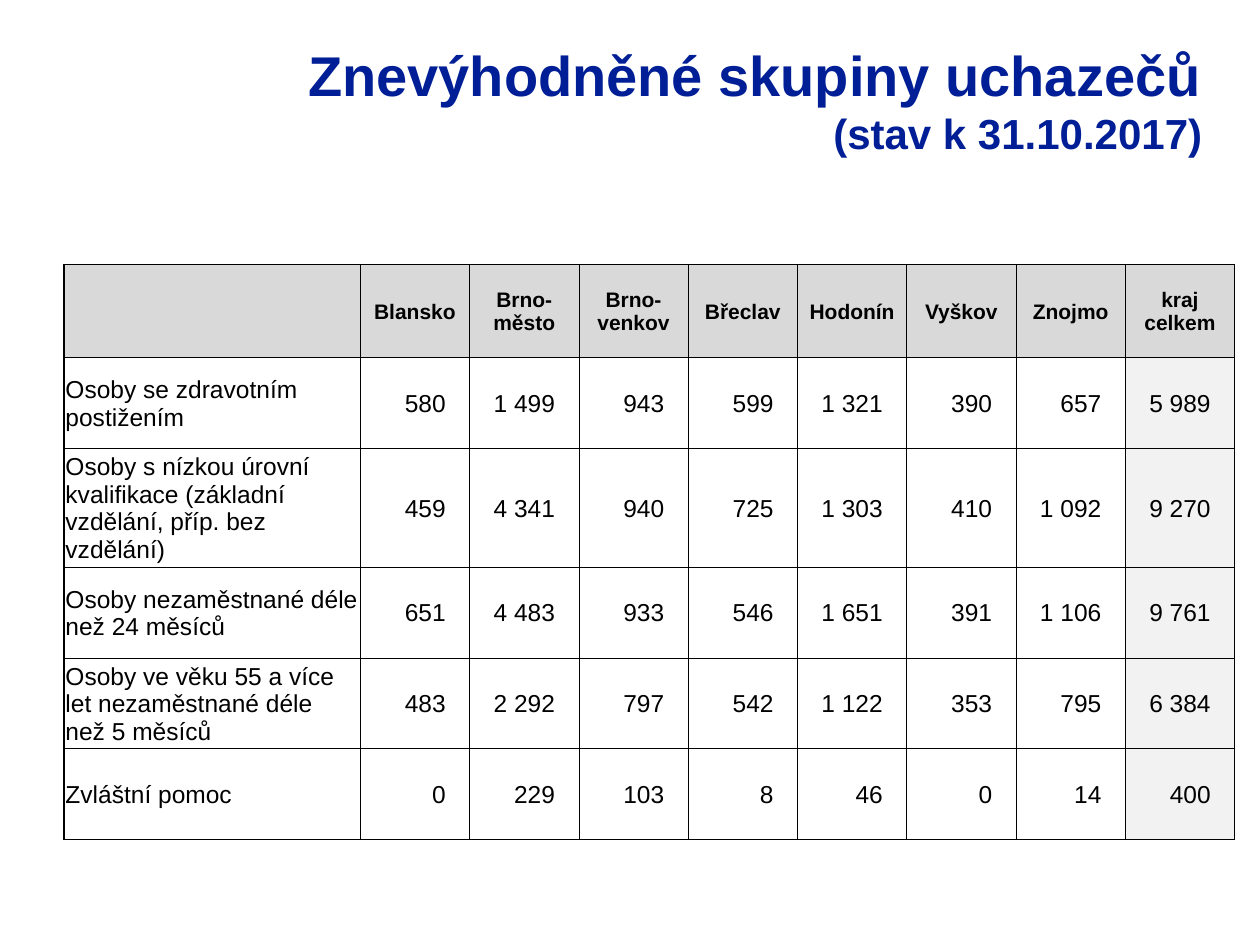
from lxml import etree
from pptx import Presentation
from pptx.dml.color import RGBColor
from pptx.enum.text import MSO_ANCHOR, PP_ALIGN
from pptx.oxml.ns import qn
from pptx.util import Inches, Pt

LEFT, CENTER, RIGHT = PP_ALIGN.LEFT, PP_ALIGN.CENTER, PP_ALIGN.RIGHT
TOP, MIDDLE = MSO_ANCHOR.TOP, MSO_ANCHOR.MIDDLE
NAVY = RGBColor(0x00, 0x1E, 0x96)
BLACK = RGBColor(0x00, 0x00, 0x00)
HEADER_GREY = RGBColor(0xD9, 0xD9, 0xD9)
TOTAL_GREY = RGBColor(0xF2, 0xF2, 0xF2)


def write(paragraph, text, size=14, color=BLACK, bold=False, align=LEFT):
    paragraph.alignment = align
    run = paragraph.add_run()
    run.text = text
    run.font.name = "Arial"
    run.font.size = Pt(size)
    run.font.bold = bold
    run.font.color.rgb = color


def set_borders(cell, **widths):
    properties = cell._tc.get_or_add_tcPr()
    for position, (side, width) in enumerate(widths.items()):
        line = etree.Element(qn(f"a:ln{side}"), w=str(Pt(width)))
        fill = etree.SubElement(line, qn("a:solidFill"))
        etree.SubElement(fill, qn("a:srgbClr"), val=str(BLACK))
        properties.insert(position, line)


prs = Presentation()
prs.slide_width, prs.slide_height = Inches(10), Inches(7.5)
slide = prs.slides.add_slide(prs.slide_layouts[6])

heading = slide.shapes.add_textbox(Inches(1.77), Inches(0.21), Inches(7.87), Inches(1.5)).text_frame
heading.word_wrap = True
heading.vertical_anchor = TOP
heading.margin_top = Inches(0.11)
write(heading.paragraphs[0], "Znevýhodněné skupiny uchazečů", size=32, color=NAVY, bold=True, align=RIGHT)
write(heading.add_paragraph(), "(stav k 31.10.2017)", size=24, color=NAVY, bold=True, align=RIGHT)

rows = [
    ["", "Blansko", "Brno-město", "Brno-venkov", "Břeclav", "Hodonín", "Vyškov", "Znojmo", "kraj celkem"],
    ["Osoby se zdravotním postižením",
     "580", "1 499", "943", "599", "1 321", "390", "657", "5 989"],
    ["Osoby s nízkou úrovní kvalifikace (základní vzdělání, příp. bez vzdělání)",
     "459", "4 341", "940", "725", "1 303", "410", "1 092", "9 270"],
    ["Osoby nezaměstnané déle než 24 měsíců",
     "651", "4 483", "933", "546", "1 651", "391", "1 106", "9 761"],
    ["Osoby ve věku 55 a více let nezaměstnané déle než 5 měsíců",
     "483", "2 292", "797", "542", "1 122", "353", "795", "6 384"],
    ["Zvláštní pomoc",
     "0", "229", "103", "8", "46", "0", "14", "400"],
]
row_heights = [0.74, 0.72, 0.88, 0.72, 0.72, 0.72]
last_row, last_col = len(rows) - 1, len(rows[0]) - 1

groups = slide.shapes.add_table(
    len(rows), len(rows[0]), Inches(0.51), Inches(2.1), Inches(9.29), Inches(sum(row_heights))
).table
groups.first_row = False
groups.horz_banding = False
for col, column in enumerate(groups.columns):
    column.width = Inches(6.94) // last_col if col else Inches(2.35)

for row, values in enumerate(rows):
    groups.rows[row].height = Inches(row_heights[row])
    for col, value in enumerate(values):
        cell = groups.cell(row, col)
        is_header, is_number = row == 0, row > 0 and col > 0
        cell.vertical_anchor = MIDDLE
        cell.margin_left = cell.margin_top = Inches(0.01)
        cell.margin_right = Inches(0.19 if is_number else 0.01)
        cell.margin_bottom = 0
        if is_header or col == last_col:
            cell.fill.solid()
            cell.fill.fore_color.rgb = HEADER_GREY if is_header else TOTAL_GREY
        else:
            cell.fill.background()
        set_borders(
            cell,
            L=1 if col == 0 else 0.5,
            R=1 if col == last_col else 0.5,
            T=1 if is_header else 0.5,
            B=1 if row == last_row else 0.5,
        )
        if value:
            write(
                cell.text_frame.paragraphs[0],
                value,
                size=12 if is_header else 14,
                bold=is_header,
                align=CENTER if is_header else RIGHT if is_number else LEFT,
            )

prs.save("out.pptx")
